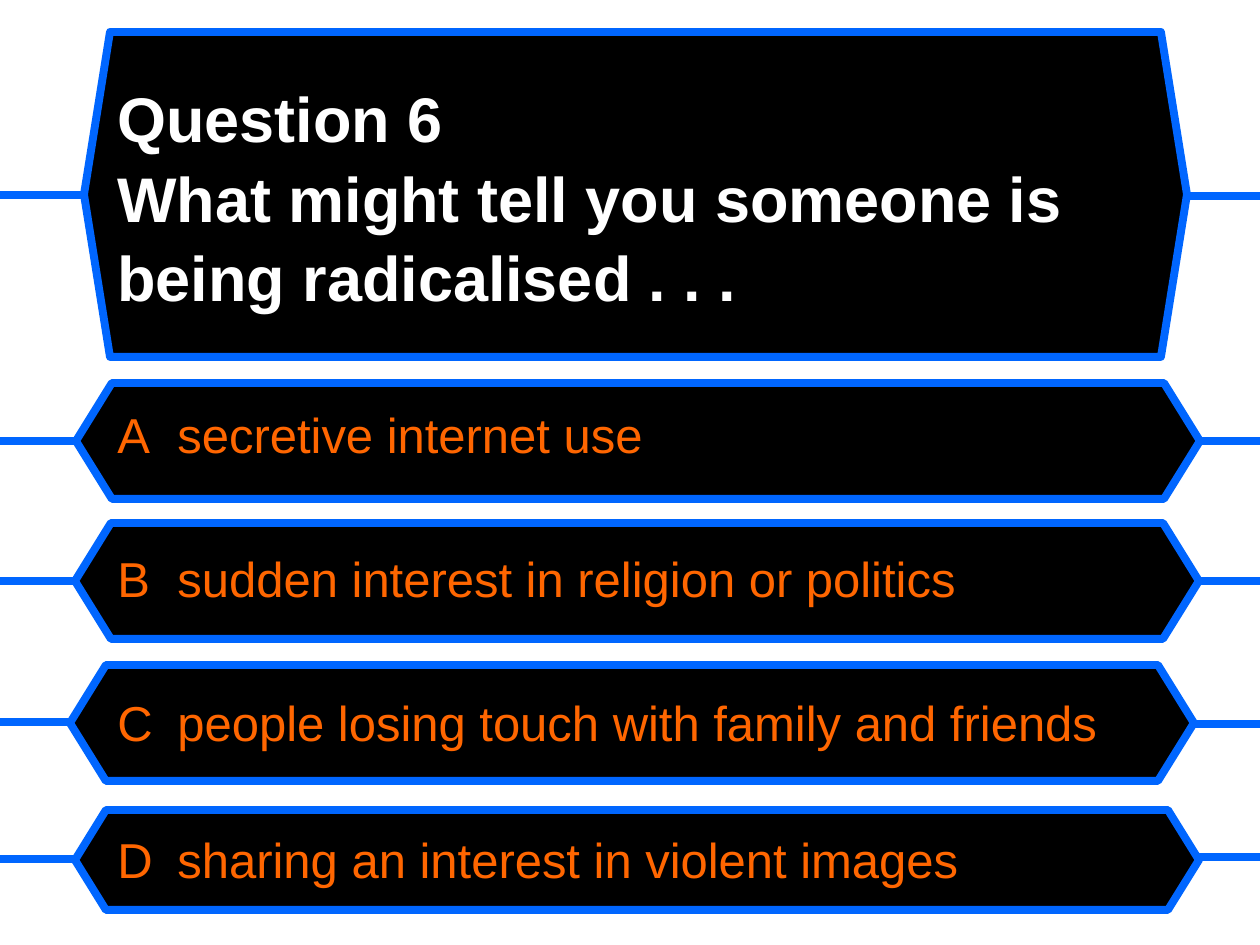
from dataclasses import dataclass

import pptx
import pptx.dml.color
import pptx.enum.shapes
import pptx.enum.text
import pptx.oxml.ns
import pptx.util
from lxml import etree

EMU_PER_PX = 914400 / 126
SLIDE_WIDTH, SLIDE_HEIGHT = 1260, 945
OVERHANG = 10
BORDER = pptx.util.Pt(4.5)
FONT = "Arial"

BLACK = pptx.dml.color.RGBColor(0x00, 0x00, 0x00)
WHITE = pptx.dml.color.RGBColor(0xFF, 0xFF, 0xFF)
BLUE = pptx.dml.color.RGBColor(0x00, 0x66, 0xFF)
ORANGE = pptx.dml.color.RGBColor(0xFF, 0x66, 0x00)


@dataclass(frozen=True)
class Panel:
    left: int
    top: int
    width: int
    height: int
    point: float
    left_wire: int
    right_wire: int


@dataclass(frozen=True)
class Answer:
    letter: str
    wording: str
    gap_pt: int


PANELS = [
    Panel(84, 32, 1103, 325, 0.08, 195, 196),
    Panel(76, 383, 1124, 116, 0.31, 441, 441),
    Panel(75, 523, 1124, 116, 0.31, 581, 581),
    Panel(70, 665, 1124, 116, 0.31, 722, 724),
    Panel(75, 810, 1124, 100, 0.31, 859, 857),
]

QUESTION_LINES = ["Question 6", "What might tell you someone is being radicalised . . ."]

ANSWERS = [
    Answer("A", "secretive internet use", 0),
    Answer("B", "sudden interest in religion or politics", 52),
    Answer("C", "people losing touch with family and friends", 52),
    Answer("D", "sharing an interest in violent images", 48),
]


def px(length: int) -> pptx.util.Emu:
    return pptx.util.Emu(round(length * EMU_PER_PX))


def draw_wire(slide, start: int, end: int, y: int) -> None:
    wire = slide.shapes.add_connector(
        pptx.enum.shapes.MSO_CONNECTOR.STRAIGHT, px(start), px(y), px(end), px(y)
    )
    wire.line.color.rgb = BLUE
    wire.line.width = BORDER
    etree.SubElement(wire._element.spPr, pptx.oxml.ns.qn("a:effectLst"))


def draw_panel(slide, panel: Panel) -> None:
    hexagon = slide.shapes.add_shape(
        pptx.enum.shapes.MSO_SHAPE.HEXAGON,
        px(panel.left), px(panel.top), px(panel.width), px(panel.height),
    )
    hexagon.adjustments[0] = panel.point
    hexagon.shadow.inherit = False
    hexagon.fill.solid()
    hexagon.fill.fore_color.rgb = BLACK
    hexagon.line.color.rgb = BLUE
    hexagon.line.width = BORDER
    draw_wire(slide, panel.left, -OVERHANG, panel.left_wire)
    draw_wire(slide, SLIDE_WIDTH + OVERHANG, panel.left + panel.width, panel.right_wire)


def add_text_frame(slide, left: int, top: int, width: int, height: int):
    frame = slide.shapes.add_textbox(px(left), px(top), px(width), px(height)).text_frame
    frame.word_wrap = True
    return frame


def add_run(paragraph, text: str, size: int, color: pptx.dml.color.RGBColor, bold: bool) -> None:
    run = paragraph.add_run()
    run.text = text
    run.font.name = FONT
    run.font.size = pptx.util.Pt(size)
    run.font.color.rgb = color
    run.font.bold = bold


def write_question(slide) -> None:
    frame = add_text_frame(slide, 105, 53, 1061, 284)
    frame.vertical_anchor = pptx.enum.text.MSO_ANCHOR.MIDDLE
    question = frame.paragraphs[0]
    question.line_spacing = 1.05
    for number, line in enumerate(QUESTION_LINES):
        if number:
            question.add_line_break()
        add_run(question, line, 36, WHITE, True)


def write_answers(slide) -> None:
    frame = add_text_frame(slide, 105, 405, 1050, 520)
    for number, answer in enumerate(ANSWERS):
        paragraph = frame.add_paragraph() if number else frame.paragraphs[0]
        paragraph.line_spacing = 0.9
        if answer.gap_pt:
            paragraph.space_before = pptx.util.Pt(answer.gap_pt)
        properties = paragraph._p.get_or_add_pPr()
        properties.set("marL", str(px(60)))
        properties.set("indent", str(-px(60)))
        add_run(paragraph, f"{answer.letter}\t", 28, ORANGE, False)
        add_run(paragraph, answer.wording, 28, ORANGE, False)


def main() -> None:
    presentation = pptx.Presentation()
    presentation.slide_width = px(SLIDE_WIDTH)
    presentation.slide_height = px(SLIDE_HEIGHT)
    slide = presentation.slides.add_slide(presentation.slide_layouts[6])
    for panel in PANELS:
        draw_panel(slide, panel)
    write_question(slide)
    write_answers(slide)
    presentation.save("out.pptx")


if __name__ == "__main__":
    main()
